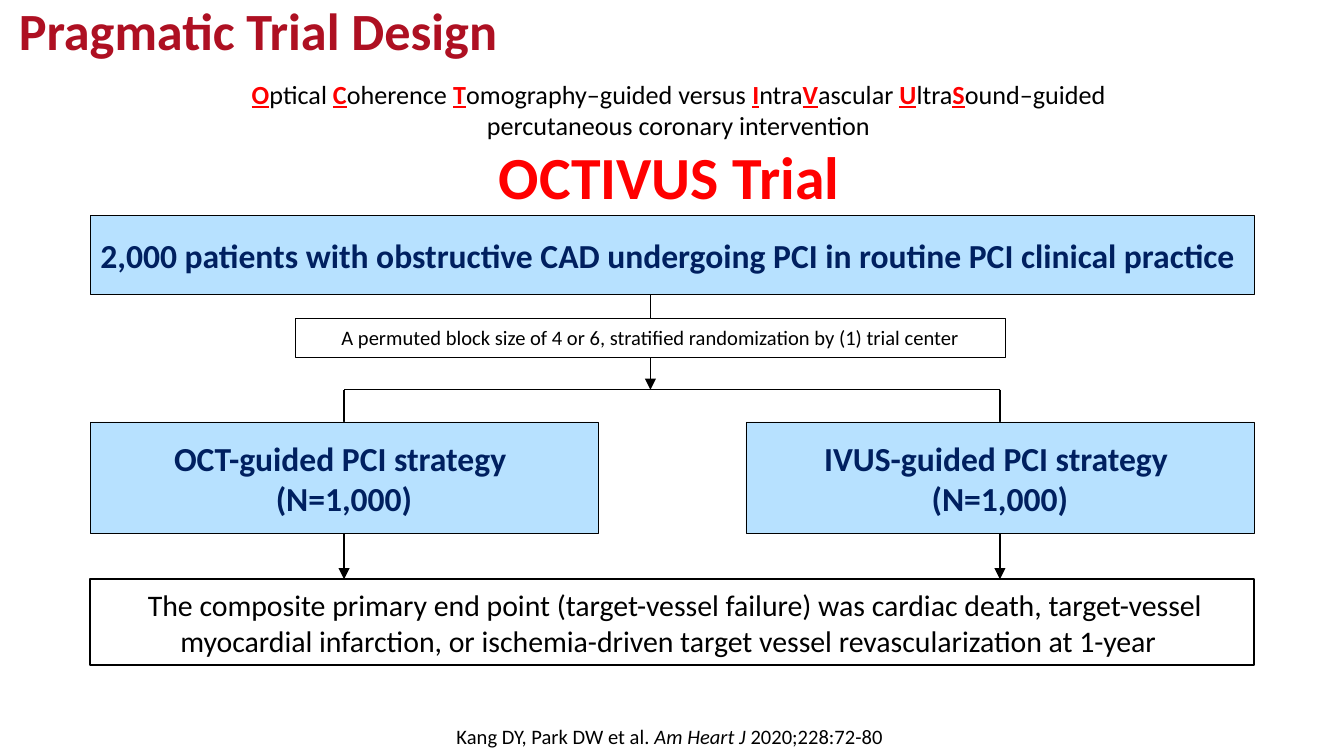
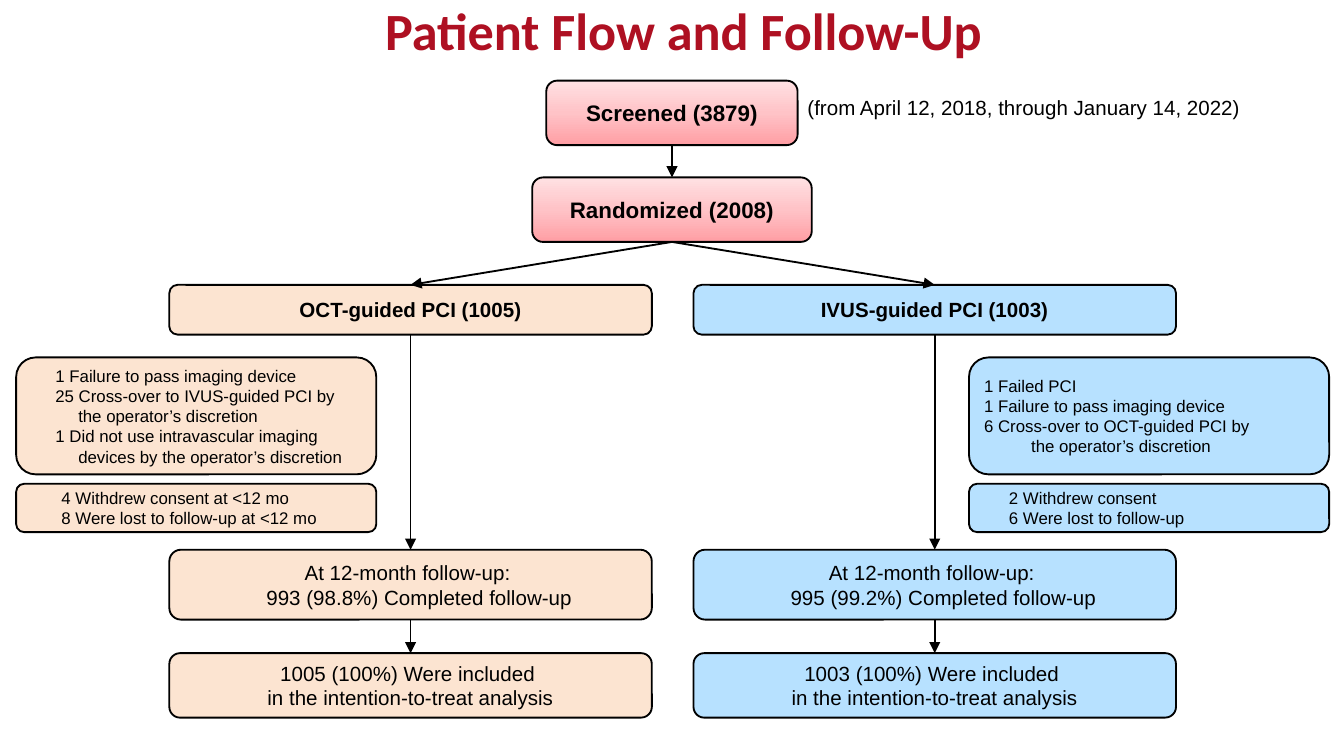
"""Build two slides on the OCTIVUS trial: its design and its patient flow."""
import copy

import pptx
import pptx.dml.color
import pptx.enum.dml
import pptx.enum.shapes
import pptx.enum.text
import pptx.oxml.ns
import pptx.util
from lxml import etree

W = 10
H = W * 9 / 16
BLACK, WHITE, RED, CRIMSON, NAVY = "000000", "FFFFFF", "FF0000", "AE1022", "002060"
BLUE, PEACH = "B7E1FF", "FCE4D1"
PINK = [(0, "FF9EA4"), (0.5, "FFC3C7"), (1, "FFE1E3")]
ALIGN = pptx.enum.text.PP_ALIGN
ANCHOR = pptx.enum.text.MSO_ANCHOR
SHAPE = pptx.enum.shapes.MSO_SHAPE
SMALL_INSETS = (0.07, 0.04, 0.07, 0.04)

DESIGN_TITLE = "Pragmatic Trial Design"
FULL_NAME = ("*O*ptical *C*oherence *T*omography–guided versus *I*ntra*V*ascular "
             "*U*ltra*S*ound–guided percutaneous coronary intervention")
TRIAL = "OCTIVUS Trial"
POPULATION = "2,000 patients with obstructive CAD undergoing PCI in routine PCI clinical practice "
RANDOMIZATION = "A permuted block size of 4 or 6, stratified randomization by (1) trial center"
STRATEGIES = [["OCT-guided PCI strategy ", "(N=1,000)"], ["IVUS-guided PCI strategy ", "(N=1,000)"]]
END_POINT = (" The composite primary end point (target-vessel failure) was cardiac death, "
             "target-vessel myocardial infarction, or ischemia-driven target vessel "
             "revascularization at 1-year ")
CITATION = "Kang DY, Park DW et al. *Am Heart J *2020;228:72-80 "

FLOW_TITLE = "Patient Flow and Follow-Up"
PERIOD = "(from April 12, 2018, through January 14, 2022)"
ENROLLED = [("Screened (3879)", 0.6, 1.87), ("Randomized (2008)", 1.32, 2.08)]
ARMS = [
    {
        "fill": PEACH, "left": 1.26, "notes_left": 0.12,
        "arm": "OCT-guided PCI (1005)",
        "deviations": [("1 Failure to pass imaging device", 0.18),
                       ("25 Cross-over to IVUS-guided PCI by", 0.18),
                       ("the operator’s discretion", 0.35),
                       ("1 Did not use intravascular imaging", 0.18),
                       ("devices by the operator’s discretion", 0.35)],
        "losses": [("4 Withdrew consent at <12 mo", 0.25),
                   ("8 Were lost to follow-up at <12 mo", 0.25)],
        "completed": "993 (98.8%) Completed follow-up",
        "analysed": "1005 (100%) Were included ",
    },
    {
        "fill": BLUE, "left": 5.16, "notes_left": 7.21,
        "arm": "IVUS-guided PCI (1003)",
        "deviations": ["1 Failed PCI", "1 Failure to pass imaging device",
                       "6 Cross-over to OCT-guided PCI by",
                       ("the operator’s discretion", 0.35)],
        "losses": [("2 Withdrew consent", 0.21), ("6 Were lost to follow-up", 0.21)],
        "completed": "995 (99.2%) Completed follow-up",
        "analysed": "1003 (100%) Were included ",
    },
]


def rgb(hex_colour):
    """Turn a hex string into a colour."""
    return pptx.dml.color.RGBColor.from_string(hex_colour)


def inches(*lengths):
    """Turn numbers into inch lengths."""
    return [pptx.util.Inches(length) for length in lengths]


def write(sp, lines, size, colour=BLACK, font="Calibri", bold=False, align=ALIGN.CENTER,
          anchor=ANCHOR.MIDDLE, wrap=True, insets=(0.1, 0.05, 0.1, 0.05), accent=None):
    """Write lines, each a text or a (text, indent) pair, with *accented* pieces."""
    tf = sp.text_frame
    tf.auto_size = pptx.enum.text.MSO_AUTO_SIZE.NONE
    tf.word_wrap, tf.vertical_anchor = wrap, anchor
    tf.margin_left, tf.margin_top, tf.margin_right, tf.margin_bottom = inches(*insets)
    for i, line in enumerate([lines] if isinstance(lines, str) else lines):
        text, indent = (line, 0) if isinstance(line, str) else line
        p = tf.add_paragraph() if i else tf.paragraphs[0]
        p.alignment = align
        if indent:
            p._p.get_or_add_pPr().set("marL", str(pptx.util.Inches(indent)))
        for j, piece in enumerate(text.split("*")):
            if not piece:
                continue
            r = p.add_run()
            r.text = piece
            f = r.font
            f.name, f.size, f.bold, f.color.rgb = font, pptx.util.Pt(size), bold, rgb(colour)
            if j % 2 and accent == "italic":
                f.italic = True
            elif j % 2:
                f.bold, f.underline, f.color.rgb = True, True, rgb(accent)


def add_slide(prs, title, left, align):
    """Add a slide with its title."""
    s = prs.slides.add_slide(prs.slide_layouts[5])
    sp = s.shapes.title
    sp.left, sp.top, sp.width, sp.height = inches(left, 0.06, 8.35, 0.47)
    write(sp, title, 28, CRIMSON, bold=True, align=align, anchor=ANCHOR.TOP)
    sp.text_frame.paragraphs[0].line_spacing = pptx.util.Pt(25)
    return s


def add_text(s, box, lines, size, **style):
    """Add a text box."""
    write(s.shapes.add_textbox(*inches(*box)), lines, size, **style)


def add_box(s, kind, box, fill, line_width, lines, size, **style):
    """Add an outlined box with text; a list of stops makes a gradient fill."""
    sp = s.shapes.add_shape(kind, *inches(*box))
    sp.shadow.inherit = False
    if isinstance(fill, str):
        sp.fill.solid()
        sp.fill.fore_color.rgb = rgb(fill)
    else:
        sp.fill.gradient()
        sp.fill.gradient_angle = 90
        stops = sp._element.spPr.find(".//" + pptx.oxml.ns.qn("a:gsLst"))
        stops.insert(1, copy.deepcopy(stops[0]))
        for stop, (position, colour) in zip(sp.fill.gradient_stops, fill):
            stop.position, stop.color.rgb = position, rgb(colour)
    sp.line.color.rgb = rgb(BLACK)
    sp.line.width = pptx.util.Pt(line_width)
    write(sp, lines, size, **style)
    return sp


def add_line(s, start, end, width, head=True):
    """Add a straight line, with an arrowhead at its end if wanted."""
    c = s.shapes.add_connector(pptx.enum.shapes.MSO_CONNECTOR.STRAIGHT, *inches(*start, *end))
    c.line.color.rgb = rgb(BLACK)
    c.line.width = pptx.util.Pt(width)
    if head:
        etree.SubElement(c.line._get_or_add_ln(), pptx.oxml.ns.qn("a:tailEnd"), type="triangle")
    etree.SubElement(c._element.spPr, pptx.oxml.ns.qn("a:effectLst"))
    return c


def join(s, upper, lower):
    """Join the bottom of one box to the top of another with an arrow."""
    c = add_line(s, (0, 0), (1, 1), 1)
    c.begin_connect(upper, 2)
    c.end_connect(lower, 0)


def build_design(prs):
    """Build the trial design slide."""
    s = add_slide(prs, DESIGN_TITLE, 0.04, ALIGN.LEFT)
    margin, half, fork, end_top = 0.67, 3.78, 2.9, 4.31
    full = W - 2 * margin
    lefts = [margin, W - margin - half]
    centres = [left + half / 2 for left in lefts]
    block_left, block_width = 2.2, 5.28
    block_centre = block_left + block_width / 2

    add_line(s, (centres[0], fork), (centres[1], fork), 0.75, head=False)
    for x in centres:
        add_line(s, (x, fork), (x, end_top), 0.75)
    add_line(s, (block_centre, 2.18), (block_centre, fork), 0.75)

    strong = {"colour": NAVY, "bold": True, "wrap": False}
    add_box(s, SHAPE.RECTANGLE, (margin, 1.6, full, 0.59), BLUE, 0.25, POPULATION, 18, **strong)
    for left, strategy in zip(lefts, STRATEGIES):
        add_box(s, SHAPE.RECTANGLE, (left, 3.14, half, 0.83), BLUE, 0.25, strategy, 18, **strong)
    add_box(s, SHAPE.RECTANGLE, (block_left, 2.37, block_width, 0.29), WHITE, 0.75,
            RANDOMIZATION, 11, anchor=ANCHOR.TOP)
    add_box(s, SHAPE.RECTANGLE, (margin, end_top, full, 0.64), WHITE, 0.75, END_POINT, 16)

    add_text(s, (3.6, 0.99, 2.76, 0.64), TRIAL, 32, colour=RED, bold=True,
             anchor=ANCHOR.TOP, wrap=False)
    add_text(s, (1.5, 0.53, 7.1, 0.57), FULL_NAME, 14, accent=RED)
    add_text(s, (W / 4, H - 0.29, W / 2, 0.29), CITATION, 11, anchor=ANCHOR.TOP, accent="italic")


def build_flow(prs):
    """Build the patient flow slide."""
    s = add_slide(prs, FLOW_TITLE, 0.91, ALIGN.CENTER)

    def flow_box(box, fill, lines, size, **style):
        """Add a rounded box of the flow chart."""
        return add_box(s, SHAPE.ROUNDED_RECTANGLE, box, fill, 1, lines, size,
                       font="Arial", insets=SMALL_INSETS, **style)

    screened, randomized = [
        flow_box(((W - width) / 2, top, width, 0.48), PINK, text, 12, bold=True)
        for text, top, width in ENROLLED]
    join(s, screened, randomized)
    for arm in ARMS:
        fill, left, width = arm["fill"], arm["left"], 3.59
        group = flow_box((left, 2.12, width, 0.37), fill, arm["arm"], 11, bold=True)
        completed = flow_box((left, 4.09, width, 0.52), fill,
                             ["At 12-month follow-up: ", (arm["completed"], 0.13)], 11)
        analysed = flow_box((left, 4.86, width, 0.48), fill,
                            [arm["analysed"], "in the intention-to-treat analysis"], 11)
        for upper, lower in [(randomized, group), (group, completed), (completed, analysed)]:
            join(s, upper, lower)
        for key, top, height in [("deviations", 2.66, 0.87), ("losses", 3.6, 0.36)]:
            flow_box((arm["notes_left"], top, 2.68, height), fill, arm[key], 9, align=ALIGN.LEFT)
    add_text(s, (5.91, 0.66, 3.67, 0.29), PERIOD, 11, font="Arial", align=ALIGN.LEFT,
             anchor=ANCHOR.TOP)


def main():
    """Build and save the slides."""
    prs = pptx.Presentation()
    prs.slide_width, prs.slide_height = inches(W, H)
    build_design(prs)
    build_flow(prs)
    prs.save("out.pptx")


if __name__ == "__main__":
    main()
